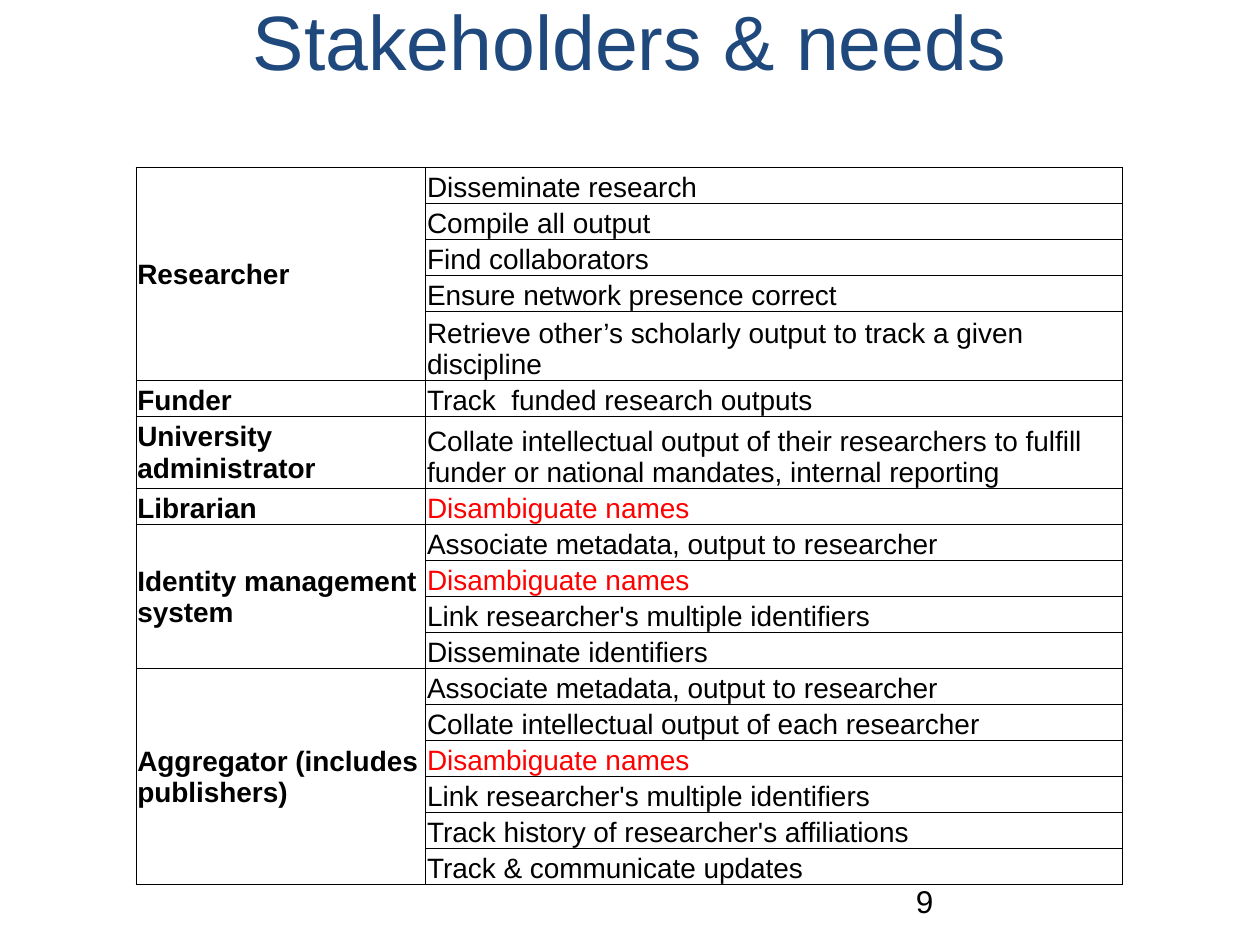
from lxml import etree
from pptx import Presentation
from pptx import util as u
from pptx.dml.color import RGBColor
from pptx.enum import text
from pptx.oxml.ns import qn

FONT = "Arial"
COLORS = {"title": "1F497D", "text": "000000", "highlight": "FF0000", "border": "000000"}
CELL_SIZE = 16
TABLE_HEIGHT = 5.65
HIGHLIGHT = "Disambiguate names"
TRACK_NEED = "Retrieve other’s scholarly output to track a given discipline"
REPORT_NEED = ("Collate intellectual output of their researchers to fulfill "
               "funder or national mandates, internal reporting")
TALL_ROWS = {TRACK_NEED: 0.5, REPORT_NEED: 0.57}
STAKEHOLDERS = [
    ("Researcher", [
        "Disseminate research",
        "Compile all output",
        "Find collaborators",
        "Ensure network presence correct",
        TRACK_NEED,
    ]),
    ("Funder", ["Track  funded research outputs"]),
    ("University administrator", [REPORT_NEED]),
    ("Librarian", [HIGHLIGHT]),
    ("Identity management system", [
        "Associate metadata, output to researcher",
        HIGHLIGHT,
        "Link researcher's multiple identifiers",
        "Disseminate identifiers",
    ]),
    ("Aggregator (includes publishers)", [
        "Associate metadata, output to researcher",
        "Collate intellectual output of each researcher",
        HIGHLIGHT,
        "Link researcher's multiple identifiers",
        "Track history of researcher's affiliations",
        "Track & communicate updates",
    ]),
]


def format_text(tf, size, color, bold=False):
    for p in tf.paragraphs:
        for r in p.runs:
            r.font.name = FONT
            r.font.size = u.Pt(size)
            r.font.bold = bold
            r.font.color.rgb = RGBColor.from_string(COLORS[color])


def add_text(s, content, box, size, color, align):
    sp = s.shapes.add_textbox(*(u.Inches(v) for v in box))
    tf = sp.text_frame
    tf.word_wrap = True
    tf.text = content
    tf.paragraphs[0].alignment = align
    format_text(tf, size, color)


def set_borders(cell):
    tc_pr = cell._tc.get_or_add_tcPr()
    for i, tag in enumerate(("a:lnL", "a:lnR", "a:lnT", "a:lnB")):
        ln = etree.Element(qn(tag), w=str(u.Pt(0.5)))
        fill = etree.SubElement(ln, qn("a:solidFill"))
        etree.SubElement(fill, qn("a:srgbClr"), val=COLORS["border"])
        tc_pr.insert(i, ln)


def style_cell(cell):
    cell.fill.background()
    cell.margin_left = cell.margin_right = cell.margin_top = u.Inches(0.01)
    cell.margin_bottom = 0
    set_borders(cell)
    for p in cell.text_frame.paragraphs:
        etree.SubElement(p._p, qn("a:endParaRPr"), sz=str(CELL_SIZE * 100))


def fill_cell(cell, content, anchor, color="text", bold=False):
    cell.text_frame.text = content
    cell.vertical_anchor = anchor
    format_text(cell.text_frame, CELL_SIZE, color, bold)


def add_stakeholder_table(s):
    all_needs = [need for _, needs in STAKEHOLDERS for need in needs]
    row_height = ((TABLE_HEIGHT - sum(TALL_ROWS.values()))
                  / (len(all_needs) - len(TALL_ROWS)))
    widths = [2.3, 5.53]
    frame = s.shapes.add_table(len(all_needs), len(widths), u.Inches(1.08), u.Inches(1.33),
                               u.Inches(sum(widths)), u.Inches(TABLE_HEIGHT))
    table = frame.table
    table.first_row = table.horz_banding = False
    for column, width in zip(table.columns, widths):
        column.width = u.Inches(width)
    for row, need in zip(table.rows, all_needs):
        row.height = u.Inches(TALL_ROWS.get(need, row_height))

    first = 0
    for name, needs in STAKEHOLDERS:
        end = first + len(needs)
        head = table.cell(first, 0)
        if len(needs) > 1:
            head.merge(table.cell(end - 1, 0))
        tall = len(needs) > 1 or needs[0] in TALL_ROWS
        anchor = text.MSO_ANCHOR.MIDDLE if tall else text.MSO_ANCHOR.BOTTOM
        fill_cell(head, name, anchor, bold=True)
        for row, need in enumerate(needs, first):
            color = "highlight" if need == HIGHLIGHT else "text"
            fill_cell(table.cell(row, 1), need, text.MSO_ANCHOR.BOTTOM, color)
        first = end
    for cell in table.iter_cells():
        style_cell(cell)


def main():
    prs = Presentation()
    prs.slide_width, prs.slide_height = u.Inches(10), u.Inches(7.5)
    s = prs.slides.add_slide(prs.slide_layouts[6])
    add_text(s, "Stakeholders & needs", (-0.13, -0.1, 10.26, 1.44), 44, "title",
             text.PP_ALIGN.CENTER)
    add_text(s, "9", (7.17, 6.95, 2.33, 0.4), 18, "text", text.PP_ALIGN.LEFT)
    add_stakeholder_table(s)
    prs.save("out.pptx")


if __name__ == "__main__":
    main()
